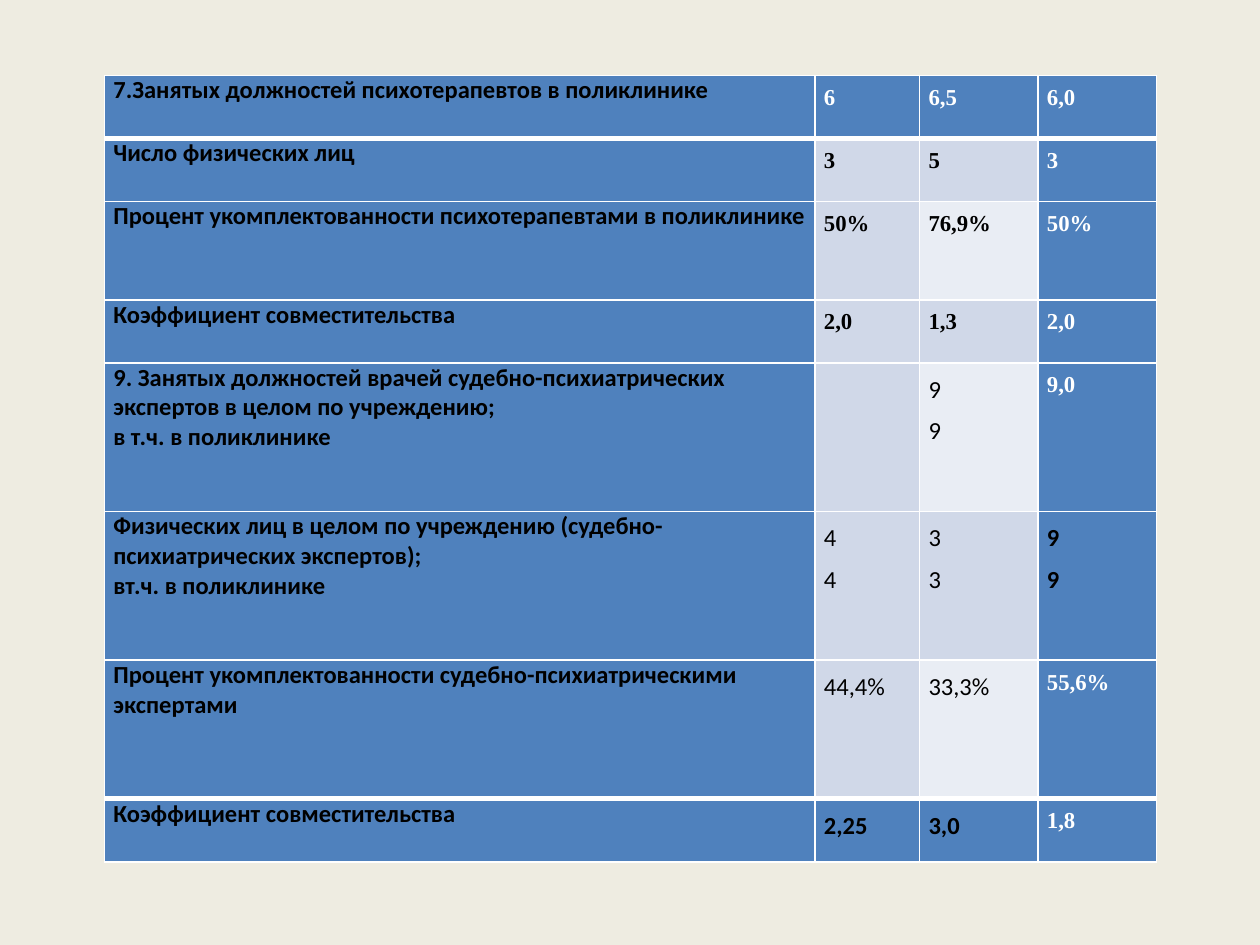
import pptx
import pptx.util
import pptx.dml.color
import pptx.enum.text
import pptx.oxml.ns
import lxml.etree

Inches = pptx.util.Inches
RGBColor = pptx.dml.color.RGBColor
BACKGROUND = RGBColor(0xEE, 0xEC, 0xE1)
BLUE = RGBColor(0x4F, 0x81, 0xBD)
BAND = RGBColor(0xD0, 0xD8, 0xE8)
PALE = RGBColor(0xE9, 0xED, 0xF4)
WHITE = RGBColor(0xFF, 0xFF, 0xFF)
BLACK = RGBColor(0x00, 0x00, 0x00)

LABEL = dict(size=14, font="Calibri", color=BLACK, bold=True)
PLAIN = dict(size=14, font="Calibri", color=BLACK, bold=False, justified=True)
STRONG = dict(PLAIN, bold=True)
SERIF = dict(size=13, font="Times New Roman", color=BLACK, bold=True, justified=True)
LIGHT = dict(SERIF, color=WHITE)

COLUMN_WIDTHS = [5.64, 0.83, 0.94, 0.94]
ROWS = [
    (0.5, "7.Занятых должностей психотерапевтов в поликлинике",
     ("6", LIGHT), ("6,5", LIGHT), ("6,0", LIGHT)),
    (0.5, "Число физических лиц",
     ("3", SERIF), ("5", SERIF), ("3", LIGHT)),
    (0.78, "Процент укомплектованности психотерапевтами в поликлинике",
     ("50%", SERIF), ("76,9%", SERIF), ("50%", LIGHT)),
    (0.5, "Коэффициент совместительства",
     ("2,0", SERIF), ("1,3", SERIF), ("2,0", LIGHT)),
    (1.18, "9. Занятых должностей врачей судебно-психиатрических экспертов "
           "в целом по учреждению;\nв т.ч. в поликлинике",
     ("", PLAIN), ("9\n9", PLAIN), ("9,0", LIGHT)),
    (1.18, "Физических лиц в целом по учреждению (судебно-психиатрических "
           "экспертов);\nвт.ч. в поликлинике",
     ("4\n4", PLAIN), ("3\n3", PLAIN), ("9\n9", STRONG)),
    (1.1, "Процент укомплектованности судебно-психиатрическими экспертами",
     ("44,4%", PLAIN), ("33,3%", PLAIN), ("55,6%", LIGHT)),
    (0.5, "Коэффициент совместительства",
     ("2,25", STRONG), ("3,0", STRONG), ("1,8", LIGHT)),
]
LAST_ROW = len(ROWS) - 1
LAST_COLUMN = len(COLUMN_WIDTHS) - 1


def write_text(frame, text, *, size, font, color, bold, justified=False):
    for index, line in enumerate(text.split("\n")):
        para = frame.paragraphs[0] if index == 0 else frame.add_paragraph()
        if justified:
            para.alignment = pptx.enum.text.PP_ALIGN.JUSTIFY
            para.line_spacing = 1.4
        if line:
            span = para.add_run()
            span.text = line
            span.font.size = pptx.util.Pt(size)
            span.font.name = font
            span.font.bold = bold
            span.font.color.rgb = color


def add_border(cell, side, points):
    qn = pptx.oxml.ns.qn
    properties = cell._tc.get_or_add_tcPr()
    line = lxml.etree.SubElement(properties, qn(f"a:{side}"), w=str(pptx.util.Pt(points)))
    fill = lxml.etree.SubElement(line, qn("a:solidFill"))
    lxml.etree.SubElement(fill, qn("a:srgbClr"), val=str(WHITE))


deck = pptx.Presentation()
deck.slide_width = Inches(10)
deck.slide_height = Inches(7.5)
page = deck.slides.add_slide(deck.slide_layouts[6])
page.background.fill.solid()
page.background.fill.fore_color.rgb = BACKGROUND

table = page.shapes.add_table(
    len(ROWS), len(COLUMN_WIDTHS), Inches(0.83), Inches(0.6), Inches(8.35), Inches(6.24)
).table
for column, width in zip(table.columns, COLUMN_WIDTHS):
    column.width = Inches(width)

for row_index, (height, label, *values) in enumerate(ROWS):
    table.rows[row_index].height = Inches(height)
    for column_index, (text, style) in enumerate([(label, LABEL), *values]):
        cell = table.cell(row_index, column_index)
        cell.margin_left = cell.margin_right = Inches(0.07)
        cell.margin_top = cell.margin_bottom = 0
        write_text(cell.text_frame, text, **style)

        add_border(cell, "lnL", 1)
        add_border(cell, "lnR", 1)
        add_border(cell, "lnT", 3 if row_index in (1, LAST_ROW) else 1)
        add_border(cell, "lnB", 3 if row_index in (0, LAST_ROW - 1) else 1)

        if row_index in (0, LAST_ROW) or column_index in (0, LAST_COLUMN):
            shade = BLUE
        elif column_index == 2 and row_index % 2 == 0:
            shade = PALE
        else:
            shade = BAND
        cell.fill.solid()
        cell.fill.fore_color.rgb = shade

deck.save("out.pptx")
